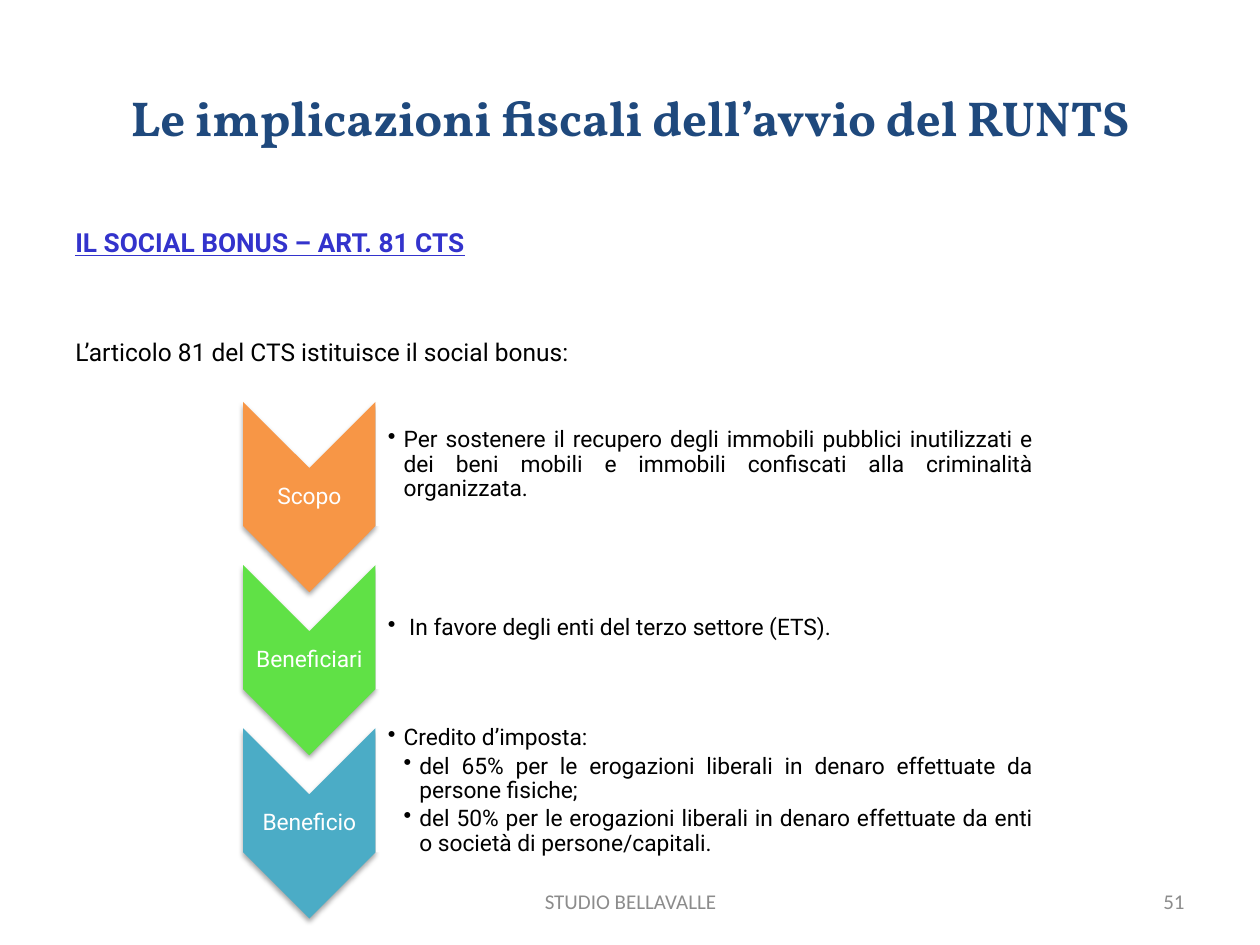
import pptx
import pptx.dml.color
import pptx.enum.shapes
import pptx.enum.text
import pptx.oxml
import pptx.oxml.ns
import pptx.util
from lxml import etree

Inches = pptx.util.Inches
Pt = pptx.util.Pt
RGBColor = pptx.dml.color.RGBColor
Align = pptx.enum.text.PP_ALIGN
Anchor = pptx.enum.text.MSO_ANCHOR
Shape = pptx.enum.shapes.MSO_SHAPE
qn = pptx.oxml.ns.qn

NAVY = RGBColor(0x1F, 0x49, 0x7D)
INDIGO = RGBColor(0x33, 0x33, 0xCC)
BLACK = RGBColor(0x00, 0x00, 0x00)
WHITE = RGBColor(0xFF, 0xFF, 0xFF)
GRAY = RGBColor(0x8C, 0x8C, 0x8C)
ORANGE = RGBColor(0xF7, 0x96, 0x46)
GREEN = RGBColor(0x60, 0xE1, 0x46)
TEAL = RGBColor(0x4B, 0xAC, 0xC6)

# Each step: label, colour, bullets as (level, text)
STEPS = [
    ("Scopo", ORANGE, [
        (1, "Per sostenere il recupero degli immobili pubblici inutilizzati e dei "
            "beni mobili e immobili confiscati alla criminalità organizzata."),
    ]),
    ("Beneficiari", GREEN, [
        (1, " In favore degli enti del terzo settore (ETS)."),
    ]),
    ("Beneficio", TEAL, [
        (1, "Credito d’imposta:"),
        (2, "del 65% per le erogazioni liberali in denaro effettuate da persone fisiche;"),
        (2, "del 50% per le erogazioni liberali in denaro effettuate da enti o società "
            "di persone/capitali."),
    ]),
]
FIRST_TOP = 3.42
STEP_PITCH = 1.295


def add_text_box(shapes, left, top, width, height, anchor=Anchor.MIDDLE, margins=None):
    box = shapes.add_textbox(Inches(left), Inches(top), Inches(width), Inches(height))
    frame = box.text_frame
    frame.word_wrap = True
    frame.vertical_anchor = anchor
    if margins:
        (frame.margin_left, frame.margin_top,
         frame.margin_right, frame.margin_bottom) = map(Inches, margins)
    return frame


def add_text(para, text, font, size, color, align, bold=False, underline=False):
    para.alignment = align
    span = para.add_run()
    span.text = text
    span.font.name = font
    span.font.size = Pt(size)
    span.font.color.rgb = color
    span.font.bold = bold
    span.font.underline = underline


def set_bullet(para, level):
    para.level = level
    properties = para._p.get_or_add_pPr()
    properties.set("marL", str(Inches(0.125 * level)))
    properties.set("indent", str(Inches(-0.125)))
    etree.SubElement(properties, qn("a:buChar")).set("char", "•")


def add_soft_shadow(shape):
    effects = etree.SubElement(shape._element.spPr, qn("a:effectLst"))
    shadow = etree.SubElement(effects, qn("a:outerShdw"), blurRad=str(Pt(3.1)),
                              dist=str(Pt(1.8)), dir="5400000", rotWithShape="0")
    color = etree.SubElement(shadow, qn("a:srgbClr"), val="000000")
    etree.SubElement(color, qn("a:alpha"), val="35000")


def add_turned_shape(shapes, kind, left, top, width, height, color):
    shape = shapes.add_shape(kind, Inches(left), Inches(top), Inches(width), Inches(height))
    shape.rotation = 90
    shape.fill.solid()
    shape.fill.fore_color.rgb = color
    shape.line.fill.background()
    return shape


def add_step(shapes, top, label, color, bullets):
    # Chevron and its label
    chevron = add_turned_shape(shapes, Shape.CHEVRON, 1.7, top, 1.51, 1.05, color)
    add_soft_shadow(chevron)
    frame = add_text_box(shapes, 1.93, top + 0.3, 1.05, 0.45, margins=(0.01,) * 4)
    para = frame.paragraphs[0]
    para.line_spacing = 0.9
    add_text(para, label, "Roboto", 13, WHITE, Align.CENTER)

    # Translucent panel and its bullets
    panel = add_turned_shape(shapes, Shape.ROUND_2_SAME_RECTANGLE,
                             5.13, top - 2.37, 0.98, 5.27, WHITE)
    panel.shadow.inherit = False
    fill_color = panel._element.spPr.find(qn("a:solidFill"))[0]
    etree.SubElement(fill_color, qn("a:alpha"), val="90000")
    frame = add_text_box(shapes, 2.98, top - 0.17, 5.22, 0.88,
                         margins=(0.1, 0.01, 0.01, 0.01))
    for index, (level, text) in enumerate(bullets):
        para = frame.add_paragraph() if index else frame.paragraphs[0]
        para.line_spacing = 0.9
        para.space_after = Pt(2)
        set_bullet(para, level)
        add_text(para, text, "Roboto", 13, BLACK, Align.JUSTIFY)


def main():
    deck = pptx.Presentation()
    deck.slide_width = Inches(10)
    deck.slide_height = Inches(7.5)
    page = deck.slides.add_slide(deck.slide_layouts[6])

    # Title
    frame = add_text_box(page.shapes, 0.5, 0.3, 9, 1.25)
    add_text(frame.paragraphs[0], "Le implicazioni fiscali dell’avvio del RUNTS",
             "Vollkorn", 28, NAVY, Align.CENTER, bold=True)

    # Heading and introduction
    frame = add_text_box(page.shapes, 0.5, 1.75, 9, 4.95, Anchor.TOP)
    add_text(frame.paragraphs[0], "IL SOCIAL BONUS – ART. 81 CTS",
             "Roboto", 15, INDIGO, Align.JUSTIFY, bold=True, underline=True)
    para = frame.add_paragraph()
    para.space_before = Pt(45)
    add_text(para, "L’articolo 81 del CTS istituisce il social bonus:",
             "Roboto", 14, BLACK, Align.JUSTIFY)

    # Chevron list, upper steps in front of lower ones
    group = page.shapes.add_group_shape()
    for index, step in reversed(list(enumerate(STEPS))):
        add_step(group.shapes, FIRST_TOP + index * STEP_PITCH, *step)

    # Footer and page number
    frame = add_text_box(page.shapes, 3.42, 6.95, 3.17, 0.4)
    add_text(frame.paragraphs[0], "STUDIO BELLAVALLE", "Calibri", 12, GRAY, Align.CENTER)
    frame = add_text_box(page.shapes, 7.17, 6.95, 2.33, 0.4)
    add_text(frame.paragraphs[0], "51", "Calibri", 12, GRAY, Align.RIGHT)

    deck.save("out.pptx")


if __name__ == "__main__":
    main()
